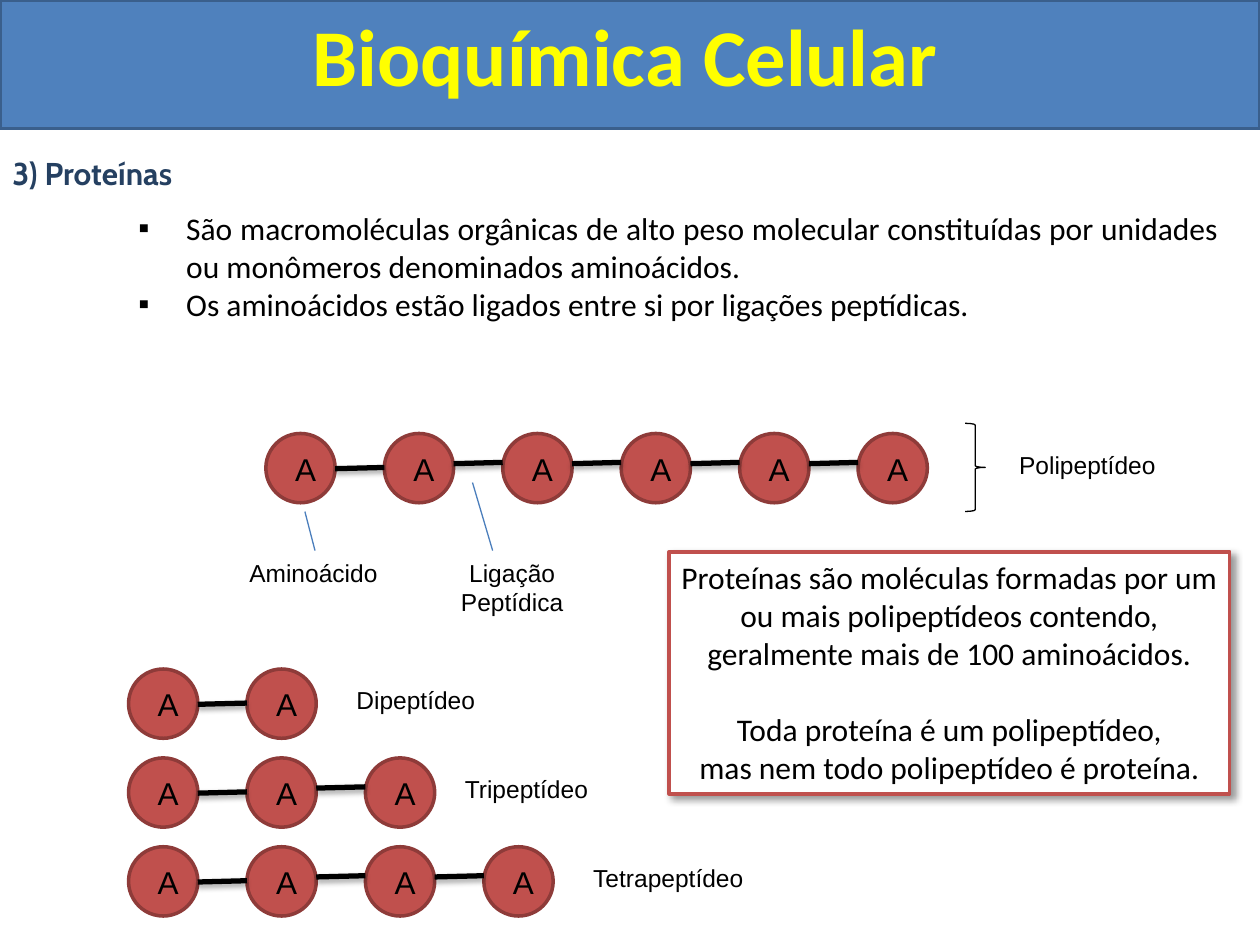
from lxml import etree
from pptx import Presentation
from pptx.dml.color import RGBColor
from pptx.enum import shapes, text
from pptx.oxml import ns
from pptx.util import Inches, Pt

BLUE = RGBColor(0x4F, 0x81, 0xBD)
BLUE_EDGE = RGBColor(0x3A, 0x5F, 0x8C)
POINTER_BLUE = RGBColor(0x4B, 0x7E, 0xBC)
NAVY = RGBColor(0x25, 0x40, 0x61)
YELLOW = RGBColor(0xFF, 0xFF, 0x00)
RED = RGBColor(0xC0, 0x50, 0x4D)
RED_EDGE = RGBColor(0x8E, 0x3B, 0x39)
BLACK = RGBColor(0, 0, 0)
WHITE = RGBColor(0xFF, 0xFF, 0xFF)

BEAD = 0.55   # diameter of an amino acid
PITCH = 0.94  # distance between neighbouring amino acids
CENTER, LEFT, JUSTIFY = text.PP_ALIGN.CENTER, text.PP_ALIGN.LEFT, text.PP_ALIGN.JUSTIFY


def inches(*lengths):
    return [Inches(length) for length in lengths]


def set_effects(part, alpha=0, blur=0, distance=0, angle=0):
    """Give the part a black outer shadow, or none when alpha is zero."""
    effects = etree.SubElement(part.element.spPr, ns.qn("a:effectLst"))
    if alpha:
        shadow = etree.SubElement(
            effects, ns.qn("a:outerShdw"), blurRad=str(Pt(blur)), dist=str(Pt(distance)),
            dir=str(angle * 60000), algn="t", rotWithShape="0")
        color = etree.SubElement(shadow, ns.qn("a:srgbClr"), val=str(BLACK))
        etree.SubElement(color, ns.qn("a:alpha"), val=str(alpha * 1000))


def add_shape(parent, kind, box, fill, edge, width=2):
    shape = parent.shapes.add_shape(kind, *inches(*box))
    shape.shadow.inherit = False
    if fill is None:
        shape.fill.background()
    else:
        shape.fill.solid()
        shape.fill.fore_color.rgb = fill
    shape.line.color.rgb = edge
    shape.line.width = Pt(width)
    return shape


def add_line(page, start, end, color, width, **shadow):
    line = page.shapes.add_connector(
        shapes.MSO_CONNECTOR.STRAIGHT, *inches(*start), *inches(*end))
    line.line.color.rgb = color
    line.line.width = Pt(width)
    set_effects(line, **shadow)


def write(para, words, size=14, font="Arial", color=BLACK, bold=False,
          align=CENTER, before=0, level=0, margin=None, bullet=None):
    para.alignment = align
    para.level = level
    if before:
        para.space_before = Pt(before)
    if margin is not None:
        properties = para._p.get_or_add_pPr()
        properties.set("marL", str(Inches(margin)))
        properties.set("indent", str(Inches(-0.38)))
        if bullet:
            etree.SubElement(properties, ns.qn("a:buFont"), typeface="Arial")
            etree.SubElement(properties, ns.qn("a:buChar"), char=bullet)
    span = para.add_run()
    span.text = words
    span.font.size = Pt(size)
    span.font.name = font
    span.font.bold = bold
    span.font.color.rgb = color


def add_label(parent, box, *lines, **style):
    frame = parent.shapes.add_textbox(*inches(*box)).text_frame
    frame.word_wrap = True
    for number, words in enumerate(lines):
        write(frame.add_paragraph() if number else frame.paragraphs[0], words, **style)


def add_title(page, box):
    left, top, width, height = box
    bar = add_shape(page, shapes.MSO_SHAPE.RECTANGLE, box, BLUE, BLUE_EDGE)
    title = page.shapes.title
    title.element.addprevious(bar.element)  # the bar lies behind the title
    title.left, title.top, title.width, title.height = inches(
        left + 0.39, top, width - 0.86, height - 0.11)
    title.text_frame.vertical_anchor = text.MSO_ANCHOR.TOP
    write(title.text_frame.paragraphs[0], "Bioquímica Celular",
          size=46, font="Calibri", color=YELLOW, bold=True)


def add_definition(page, box):
    frame = page.shapes.add_textbox(*inches(*box)).text_frame
    frame.word_wrap = True
    write(frame.paragraphs[0], "3) Proteínas", size=18, font="Cabin", color=NAVY,
          bold=True, align=JUSTIFY, margin=0.38)
    points = [
        ("São macromoléculas orgânicas de alto peso molecular constituídas por "
         "unidades ou monômeros denominados aminoácidos.", 10),
        ("Os aminoácidos estão ligados entre si por ligações peptídicas.", 0),
    ]
    for words, before in points:
        write(frame.add_paragraph(), words, size=18, font="Calibri", align=JUSTIFY,
              before=before, level=2, margin=1.38, bullet="▪")


def add_chain(page, left, top, count):
    """A row of amino acids joined by peptide bonds."""
    for number in range(count):
        x = left + number * PITCH
        bead = page.shapes.add_group_shape()
        add_shape(bead, shapes.MSO_SHAPE.OVAL, (x, top, BEAD, BEAD), RED, RED_EDGE)
        add_label(bead, (x + 0.08, top + 0.08, 0.47, 0.4), "A", size=18)
    for number in range(count - 1):
        x = left + number * PITCH
        y = top + (0.24 if number else 0.28)
        add_line(page, (x + BEAD, y), (x + PITCH, y - 0.01), BLACK, 3,
                 alpha=35, blur=3.1, distance=1.8, angle=90)


def add_polypeptide(page, left, top):
    add_chain(page, left, top, 6)
    # Names of the parts, with their pointers
    add_label(page, (left - 0.23, top + 0.94, 1.25, 0.34), "Aminoácido", align=LEFT)
    add_label(page, (left + 1.33, top + 0.94, 1.25, 0.57), "Ligação", "Peptídica")
    add_line(page, (left + 1.64, top + 0.39), (left + 1.8, top + 0.93), POINTER_BLUE, 0.75)
    add_line(page, (left + 0.31, top + 0.62), (left + 0.39, top + 0.93), POINTER_BLUE, 0.75)
    # Brace and name of the whole chain
    add_shape(page, shapes.MSO_SHAPE.RIGHT_BRACE,
              (left + 5.55, top - 0.08, 0.16, 0.7), None, BLACK, 0.75)
    add_label(page, (left + 5.78, top + 0.08, 1.48, 0.34), "Polipeptídeo")


def add_short_chains(page, left, top):
    chains = [("Dipeptídeo", 2, 1.71), ("Tripeptídeo", 3, 2.57), ("Tetrapeptídeo", 4, 3.59)]
    for row, (name, count, offset) in enumerate(chains):
        y = top + row * 0.705
        add_chain(page, left, y, count)
        add_label(page, (left + offset, y + 0.08, 1.48, 0.34), name, align=LEFT)


def add_summary(page, box):
    card = add_shape(page, shapes.MSO_SHAPE.RECTANGLE, box, WHITE, RED)
    card.element.spPr.remove(card.element.spPr.find(ns.qn("a:effectLst")))
    set_effects(card, alpha=40, blur=4, distance=3, angle=45)
    frame = card.text_frame
    frame.word_wrap = True
    frame.vertical_anchor = text.MSO_ANCHOR.TOP
    style = dict(size=18, font="Calibri")
    write(frame.paragraphs[0], "Proteínas são moléculas formadas por um ou mais "
          "polipeptídeos contendo, geralmente mais de 100 aminoácidos.", **style)
    write(frame.add_paragraph(), "Toda proteína é um polipeptídeo,", before=22, **style)
    write(frame.add_paragraph(), "mas nem todo polipeptídeo é proteína.", **style)


def main():
    deck = Presentation()
    deck.slide_width, deck.slide_height = inches(10, 7.5)
    page = deck.slides.add_slide(deck.slide_layouts[5])
    add_title(page, (0, 0, 10, 1.02))
    add_definition(page, (0, 1.17, 9.77, 1.45))
    add_polypeptide(page, 2.11, 3.44)
    add_short_chains(page, 1.02, 5.31)
    add_summary(page, (5.31, 4.38, 4.45, 1.92))
    deck.save("out.pptx")


if __name__ == "__main__":
    main()
